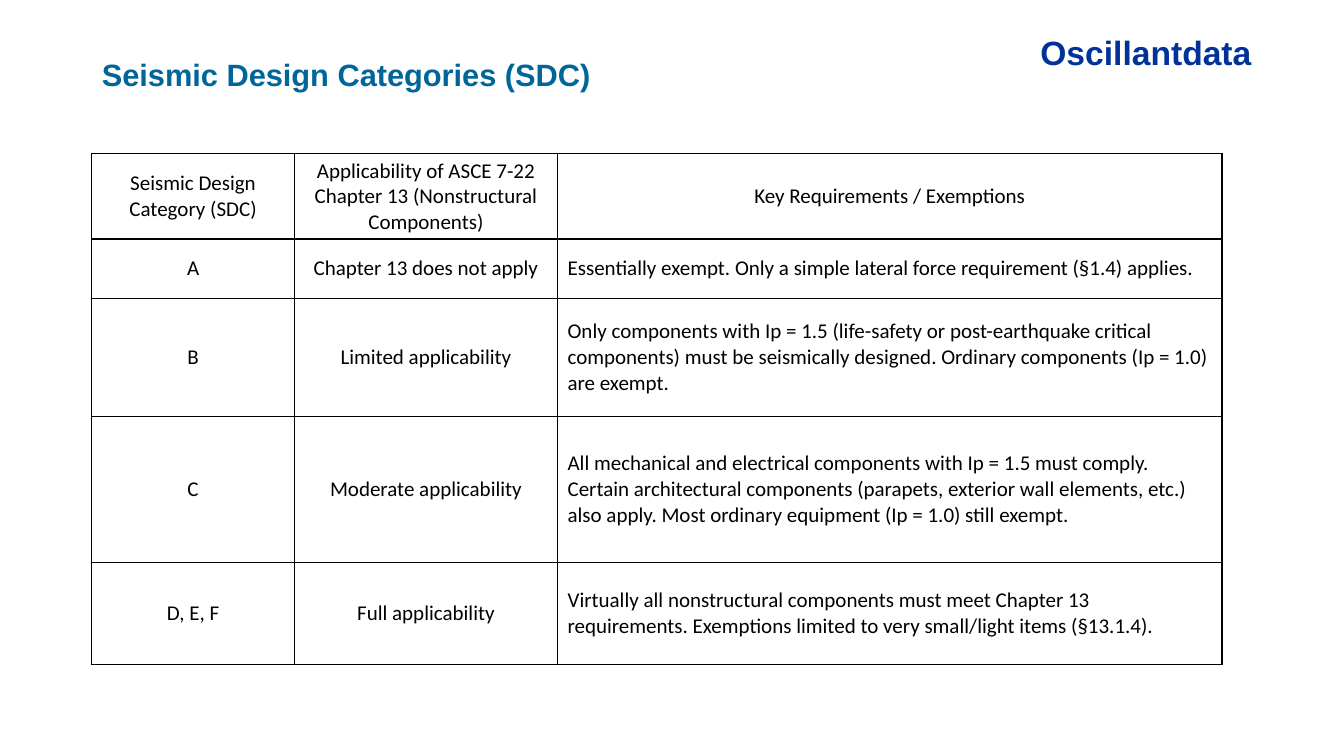
import pptx
import pptx.util
import pptx.dml.color
import pptx.enum.text
import pptx.oxml
import pptx.oxml.ns

Inches = pptx.util.Inches
Pt = pptx.util.Pt
RGBColor = pptx.dml.color.RGBColor
ALIGN = pptx.enum.text.PP_ALIGN
ANCHOR = pptx.enum.text.MSO_ANCHOR

BRAND_BLUE = RGBColor(0x00, 0x33, 0x99)
TITLE_BLUE = RGBColor(0x00, 0x66, 0x99)
BLACK = RGBColor(0x00, 0x00, 0x00)

COLUMN_WIDTHS = [2.01, 2.61, 6.59]
ROW_HEIGHTS = [0.85, 0.59, 1.17, 1.45, 1.01]
CATEGORIES = [
    ("Seismic Design Category (SDC)",
     "Applicability of ASCE 7-22 Chapter 13 (Nonstructural Components)",
     "Key Requirements / Exemptions"),
    ("A", "Chapter 13 does not apply",
     "Essentially exempt. Only a simple lateral force requirement (§1.4) applies."),
    ("B", "Limited applicability",
     "Only components with Ip = 1.5 (life-safety or post-earthquake critical components) "
     "must be seismically designed. Ordinary components (Ip = 1.0) are exempt."),
    ("C", "Moderate applicability",
     "All mechanical and electrical components with Ip = 1.5 must comply. "
     "Certain architectural components (parapets, exterior wall elements, etc.) "
     "also apply. Most ordinary equipment (Ip = 1.0) still exempt."),
    ("D, E, F", "Full applicability",
     "Virtually all nonstructural components must meet Chapter 13 requirements. "
     "Exemptions limited to very small/light items (§13.1.4)."),
]


def format_runs(paragraph, font_name, size, color, bold=False):
    for run in paragraph.runs:
        run.font.name = font_name
        run.font.size = Pt(size)
        run.font.bold = bold
        run.font.color.rgb = color


def place_heading(heading, box, text, size, color):
    heading.left, heading.top, heading.width, heading.height = map(Inches, box)
    frame = heading.text_frame
    frame.text = text
    frame.word_wrap = False
    frame.vertical_anchor = ANCHOR.TOP
    frame.auto_size = pptx.enum.text.MSO_AUTO_SIZE.SHAPE_TO_FIT_TEXT
    frame.paragraphs[0].alignment = ALIGN.LEFT
    format_runs(frame.paragraphs[0], "Arial", size, color, bold=True)


def add_borders(cell):
    properties = cell._tc.get_or_add_tcPr()
    for side in ("lnL", "lnR", "lnT", "lnB"):
        properties.append(pptx.oxml.parse_xml(
            f'<a:{side} {pptx.oxml.ns.nsdecls("a")} w="{Pt(1)}">'
            f'<a:solidFill><a:srgbClr val="{BLACK}"/></a:solidFill></a:{side}>'))


def fill_cell(cell, text, alignment):
    add_borders(cell)
    cell.fill.background()
    cell.vertical_anchor = ANCHOR.MIDDLE
    cell.text_frame.text = text
    paragraph = cell.text_frame.paragraphs[0]
    paragraph.alignment = alignment
    format_runs(paragraph, "Calibri", 15, BLACK)


def add_category_table(slide):
    table = slide.shapes.add_table(
        len(ROW_HEIGHTS), len(COLUMN_WIDTHS), Inches(0.91), Inches(1.52),
        Inches(sum(COLUMN_WIDTHS)), Inches(sum(ROW_HEIGHTS))).table
    table.first_row = False
    table.horz_banding = False
    for column, width in zip(table.columns, COLUMN_WIDTHS):
        column.width = Inches(width)
    for row, height in zip(table.rows, ROW_HEIGHTS):
        row.height = Inches(height)
    for r, category in enumerate(CATEGORIES):
        for c, text in enumerate(category):
            is_requirement = r > 0 and c == 2
            fill_cell(table.cell(r, c), text, ALIGN.LEFT if is_requirement else ALIGN.CENTER)


def main():
    presentation = pptx.Presentation()
    presentation.slide_width = Inches(13.33)
    presentation.slide_height = Inches(7.5)
    slide = presentation.slides.add_slide(presentation.slide_layouts[5])
    brand = slide.shapes.add_textbox(0, 0, 0, 0)
    place_heading(brand, (10.22, 0.27, 2.35, 0.5), "Oscillantdata", 24, BRAND_BLUE)
    place_heading(slide.shapes.title, (0.91, 0.5, 5.11, 0.47),
                  "Seismic Design Categories (SDC)", 22, TITLE_BLUE)
    add_category_table(slide)
    presentation.save("out.pptx")


if __name__ == "__main__":
    main()
